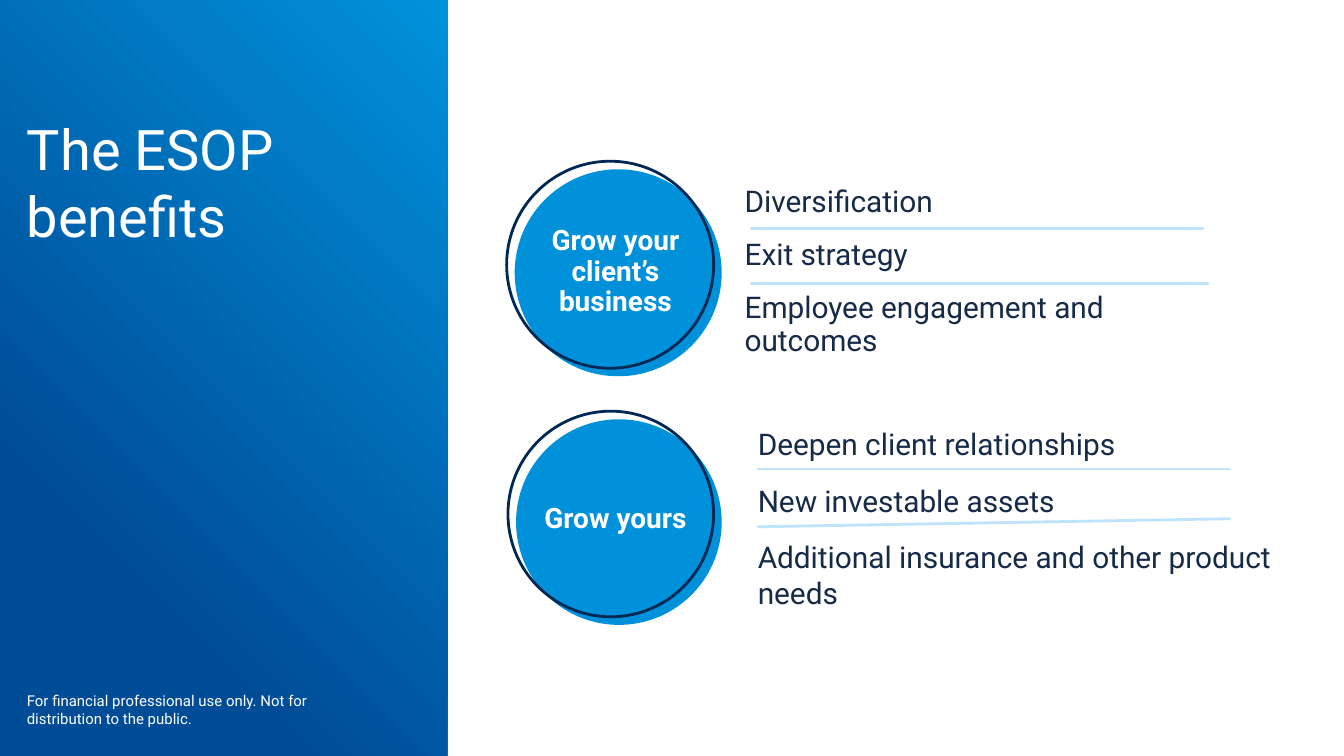
from lxml.etree import SubElement
from pptx import Presentation
from pptx.dml.color import RGBColor
from pptx.enum.shapes import MSO_CONNECTOR, MSO_SHAPE
from pptx.enum.text import MSO_ANCHOR, MSO_AUTO_SIZE, PP_ALIGN
from pptx.oxml.ns import qn
from pptx.util import Inches, Pt

WHITE, INK, NAVY = "FFFFFF", "162B48", "002855"
DEEP, BRIGHT, PALE = "004C97", "0091DA", "BDE4FC"
PAGE_WIDTH = 10
PAGE_HEIGHT = PAGE_WIDTH * 9 / 16


def color(value):
    return RGBColor.from_string(value)


def lengths(*values):
    return [Inches(value) for value in values]


class SlideBuilder:
    font_name = "Roboto"
    line_width = Pt(1.5)

    def __init__(self, deck):
        self.page = deck.slides.add_slide(deck.slide_layouts[5])

    def fill_text(self, box, texts, size, tint, bold=False, inset=(0, 0, 0, 0),
                  anchor=MSO_ANCHOR.MIDDLE, **paragraph_format):
        frame = box.text_frame
        frame_format = {"word_wrap": True, "auto_size": MSO_AUTO_SIZE.NONE,
                        "vertical_anchor": anchor}
        sides = ("margin_left", "margin_top", "margin_right", "margin_bottom")
        frame_format.update(zip(sides, lengths(*inset)))
        for name, value in frame_format.items():
            setattr(frame, name, value)
        for index, text in enumerate(texts):
            para = frame.add_paragraph() if index else frame.paragraphs[0]
            for name, value in paragraph_format.items():
                setattr(para, name, value)
            span = para.add_run()
            span.text = text
            font_format = {"name": self.font_name, "size": Pt(size), "bold": bold}
            for name, value in font_format.items():
                setattr(span.font, name, value)
            span.font.color.rgb = color(tint)

    def title(self, text, place):
        box = self.page.shapes.title
        for name, value in zip(("left", "top", "width", "height"), lengths(*place)):
            setattr(box, name, value)
        self.fill_text(box, [text], 30, WHITE, inset=(0, 0.33, 0, 0),
                       anchor=MSO_ANCHOR.TOP, alignment=PP_ALIGN.LEFT)
        self.page.shapes._spTree.append(box._element)

    def text(self, texts, place, size, tint, **text_format):
        box = self.page.shapes.add_textbox(*lengths(*place))
        self.fill_text(box, texts, size, tint, **text_format)

    def panel(self, place):
        shape = self.page.shapes.add_shape(MSO_SHAPE.RECTANGLE, *lengths(*place))
        shape.shadow.inherit = False
        shape.line.fill.background()
        shape.fill.gradient()
        shape.fill.gradient_angle = 45
        for stop, (position, tint) in zip(shape.fill.gradient_stops,
                                          ((0.25, DEEP), (0.99, BRIGHT))):
            stop.position = position
            stop.color.rgb = color(tint)

    def circle(self, left, top, diameter, fill=None, outline=None):
        place = lengths(left, top, diameter, diameter)
        shape = self.page.shapes.add_shape(MSO_SHAPE.OVAL, *place)
        shape.shadow.inherit = False
        for target, tint in ((shape.fill, fill), (shape.line.fill, outline)):
            if tint:
                target.solid()
                target.fore_color.rgb = color(tint)
            else:
                target.background()
        if outline:
            shape.line.width = self.line_width

    def divider(self, *ends):
        line = self.page.shapes.add_connector(MSO_CONNECTOR.STRAIGHT, *lengths(*ends))
        line.line.color.rgb = color(PALE)
        line.line.width = self.line_width
        properties = line._element.spPr
        properties.find(qn("a:ln")).set("cap", "rnd")
        SubElement(properties, qn("a:effectLst"))


def main():
    deck = Presentation()
    deck.slide_width, deck.slide_height = lengths(PAGE_WIDTH, PAGE_HEIGHT)
    slide = SlideBuilder(deck)
    padding = (0.1, 0.05, 0.1, 0.05)

    slide.panel((0, 0, 3.33, PAGE_HEIGHT))
    slide.title("The ESOP benefits", (0.2, 0.52, 2.6, 3.4))
    slide.text(["For financial professional use only. Not for distribution to the public."],
               (0.2, 5.11, 2.6, 0.3), 8, WHITE, anchor=MSO_ANCHOR.BOTTOM)

    slide.text(["Diversification", "Exit strategy", "Employee engagement and outcomes"],
               (5.54, 1.23, 3.45, 1.59), 16, INK, line_spacing=0.9, space_after=Pt(11.2))
    slide.text(["Deepen client relationships", "New investable assets",
                "Additional insurance and other product needs"],
               (5.54, 3.06, 4.54, 1.59), 16, INK, inset=padding, space_after=Pt(11.2))

    for label, label_place, left, top, diameter in (
            ("Grow your client’s business", (3.98, 1.52, 1.2, 1.01), 3.83, 1.26, 1.54),
            ("Grow yours", (3.81, 3.7, 1.54, 0.33), 3.84, 3.12, 1.53)):
        slide.circle(left, top, diameter, fill=BRIGHT)
        slide.text([label], label_place, 15, WHITE, bold=True, inset=padding,
                   alignment=PP_ALIGN.CENTER, line_spacing=0.9)
        slide.circle(left - 0.06, top - 0.06, diameter, outline=NAVY)

    for ends in ((8.95, 1.7, 5.59, 1.7), (8.99, 2.11, 5.59, 2.11),
                 (9.15, 3.49, 5.64, 3.49), (9.15, 3.86, 5.64, 3.92)):
        slide.divider(*ends)

    deck.save("out.pptx")


if __name__ == "__main__":
    main()
